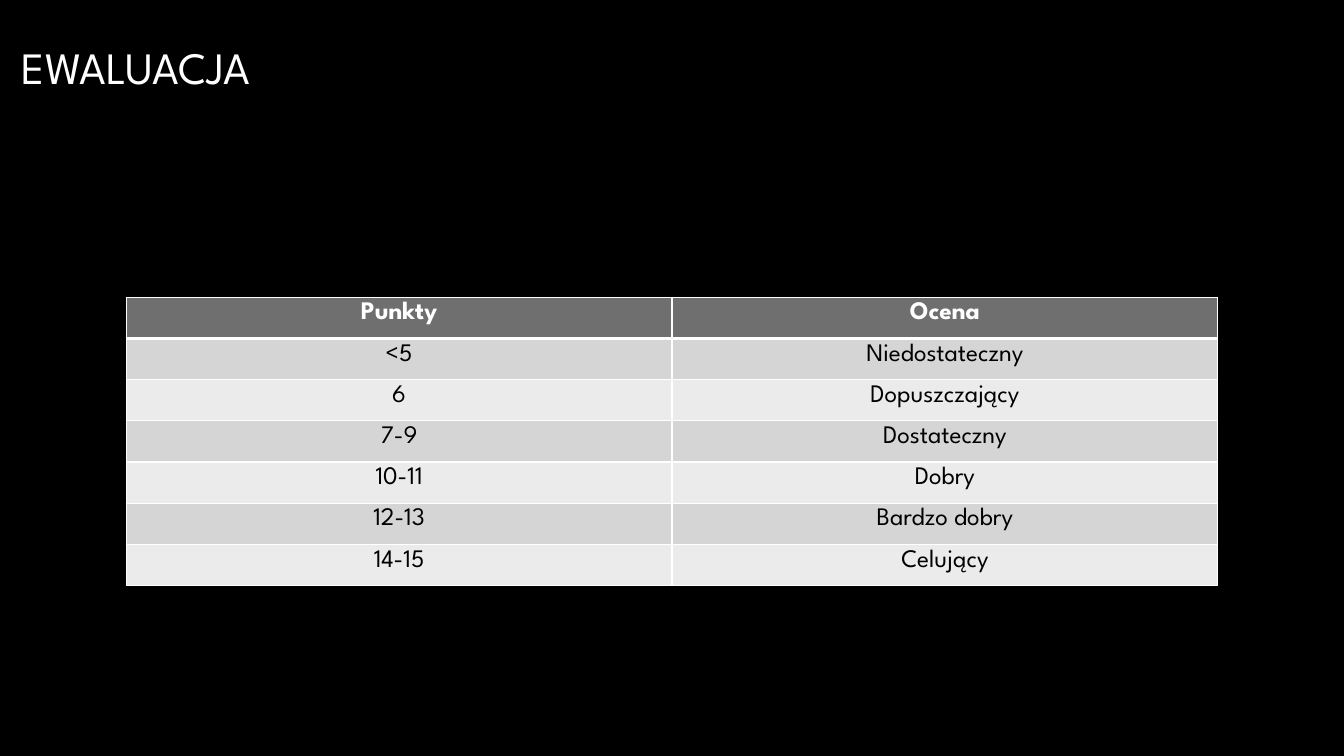
from lxml.etree import SubElement
from pptx import Presentation
from pptx.dml.color import RGBColor
from pptx.enum.text import MSO_ANCHOR, PP_ALIGN
from pptx.oxml.ns import qn
from pptx.util import Cm, Pt

COLORS = {
    "background": "000000",
    "title_start": "FFFFFF",
    "title_end": "A6A6A6",
    "header": "6F6F6F",
    "header_text": "FFFFFF",
    "band_dark": "D5D5D5",
    "band_light": "EBEBEB",
    "body_text": "000000",
    "border": "FFFFFF",
}
FONT = "League Spartan"
GRADES = [
    ("Punkty", "Ocena"),
    ("<5", "Niedostateczny"),
    ("6", "Dopuszczający"),
    ("7-9", "Dostateczny"),
    ("10-11", "Dobry"),
    ("12-13", "Bardzo dobry"),
    ("14-15", "Celujący"),
]


def color(name):
    return RGBColor.from_string(COLORS[name])


def set_format(target, values):
    for name, value in values.items():
        setattr(target, name, value)


def set_borders(cell, widths):
    """Draw cell borders; widths maps each side tag to points."""
    properties = cell._tc.get_or_add_tcPr()
    for index, (side, width) in enumerate(widths.items()):
        line = properties.makeelement(qn(f"a:{side}"), {"w": str(Pt(width))})
        fill = SubElement(line, qn("a:solidFill"))
        SubElement(fill, qn("a:srgbClr"), val=COLORS["border"])
        properties.insert(index, line)


def add_title(slide, text, left, top, width, height):
    frame = slide.shapes.add_textbox(left, top, width, height).text_frame
    set_format(frame, {"word_wrap": True, "vertical_anchor": MSO_ANCHOR.MIDDLE})
    run = frame.paragraphs[0].add_run()
    run.text = text
    set_format(run.font, {"name": FONT, "size": Pt(32)})
    fill = run.font.fill
    fill.gradient()
    fill.gradient_angle = 267
    for stop, name in zip(fill.gradient_stops, ("title_start", "title_end")):
        stop.color.rgb = color(name)


def format_cell(cell, text, row):
    is_header = row == 0
    band = "header" if is_header else "band_dark" if row % 2 else "band_light"
    cell.fill.solid()
    cell.fill.fore_color.rgb = color(band)
    set_borders(cell, {
        "lnL": 1,
        "lnR": 1,
        "lnT": 3 if row == 1 else 1,
        "lnB": 3 if is_header else 1,
    })
    paragraph = cell.text_frame.paragraphs[0]
    paragraph.alignment = PP_ALIGN.CENTER
    run = paragraph.add_run()
    run.text = text
    set_format(run.font, {"name": FONT, "size": Pt(18), "bold": is_header})
    run.font.color.rgb = color("header_text" if is_header else "body_text")


def add_grade_table(slide, grades, left, top, width, height):
    table = slide.shapes.add_table(
        len(grades), len(grades[0]), left, top, width, height
    ).table
    for row, texts in enumerate(grades):
        for column, text in enumerate(texts):
            format_cell(table.cell(row, column), text, row)


def main():
    presentation = Presentation()
    set_format(presentation, {"slide_width": Cm(33.87), "slide_height": Cm(19.05)})
    slide = presentation.slides.add_slide(presentation.slide_layouts[6])
    background = slide.background.fill
    background.solid()
    background.fore_color.rgb = color("background")
    add_title(slide, "EWALUACJA", Cm(0.3), Cm(0.2), Cm(27.5), Cm(2.97))
    add_grade_table(slide, GRADES, Cm(3.18), Cm(7.49), Cm(27.51), Cm(7.27))
    presentation.save("out.pptx")


if __name__ == "__main__":
    main()
